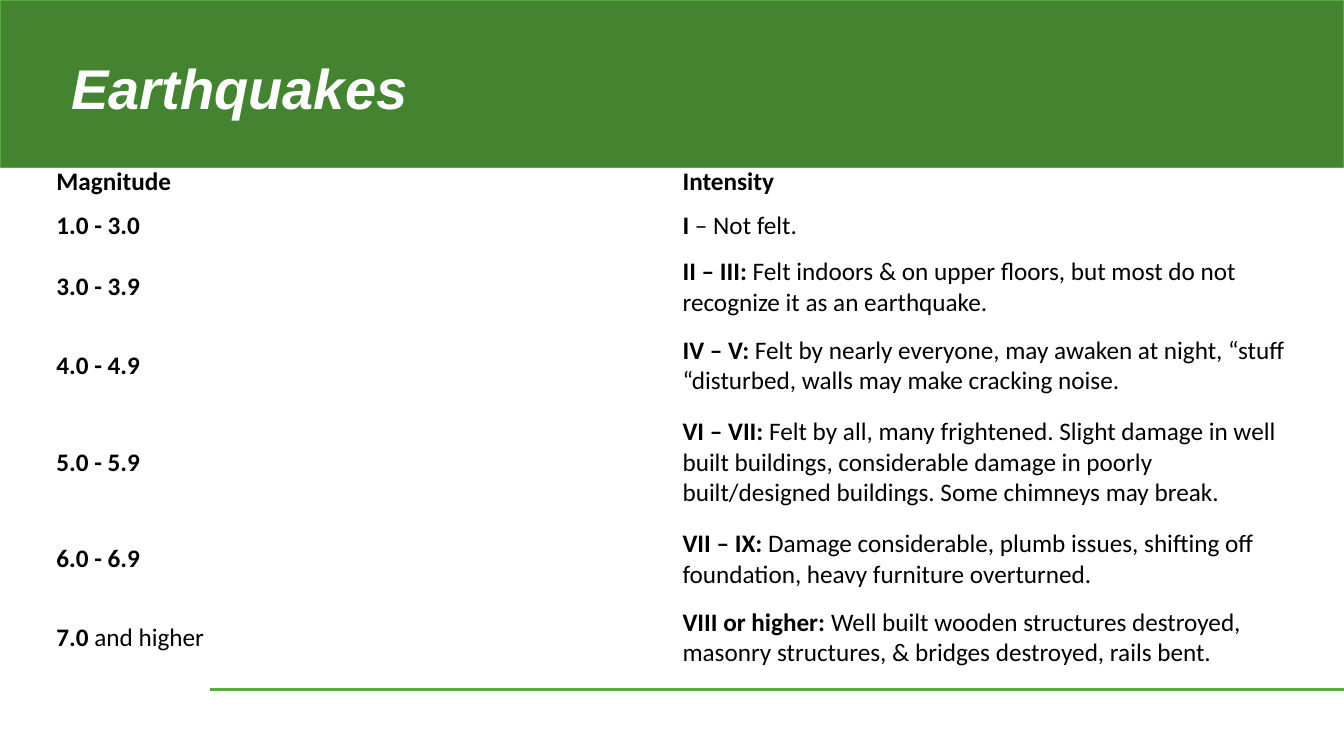
from lxml import etree
from pptx import Presentation
from pptx.dml.color import RGBColor
from pptx.enum.shapes import MSO_CONNECTOR, MSO_SHAPE
from pptx.enum.text import MSO_ANCHOR
from pptx.oxml.ns import qn
from pptx.util import Inches, Pt

RECTANGLE = MSO_SHAPE.RECTANGLE
STRAIGHT = MSO_CONNECTOR.STRAIGHT
MIDDLE = MSO_ANCHOR.MIDDLE
NO_STYLE_NO_GRID = "{2D5ABB26-0587-4C30-8999-92F81FD0307C}"

COLORS = {"band": "448431", "line": "57AC40", "title": "FFFFFF", "text": "000000"}

COLUMN_WIDTH = 6.21
ROW_HEIGHTS = [0.44, 0.44, 0.78, 0.78, 1.14, 0.78, 0.78]

# Each cell holds its bold part and its regular part.
ROWS = [
    (("Magnitude", ""), ("Intensity", "")),
    (("1.0 - 3.0", ""), ("I ", "– Not felt.")),
    (("3.0 - 3.9", ""),
     ("II – III:", " Felt indoors & on upper floors, but most do not "
      "recognize it as an earthquake.")),
    (("4.0 - 4.9", ""),
     ("IV – V: ", "Felt by nearly everyone, may awaken at night, “stuff "
      "“disturbed, walls may make cracking noise.")),
    (("5.0 - 5.9", ""),
     ("VI – VII: ", "Felt by all, many frightened. Slight damage in well built "
      "buildings, considerable damage in poorly built/designed buildings. "
      "Some chimneys may break.")),
    (("6.0 - 6.9", ""),
     ("VII – IX: ", "Damage considerable, plumb issues, shifting off "
      "foundation, heavy furniture overturned.")),
    (("7.0", " and higher"),
     ("VIII or higher: ", "Well built wooden structures destroyed, masonry "
      "structures, & bridges destroyed, rails bent.")),
]


def color(name):
    return RGBColor.from_string(COLORS[name])


def set_font(paragraph, name, size, color_name):
    paragraph.font.name = name
    paragraph.font.size = Pt(size)
    paragraph.font.color.rgb = color(color_name)


def add_band(slide):
    band = slide.shapes.add_shape(RECTANGLE, 0, 0, Inches(13.33), Inches(1.66))
    band.shadow.inherit = False
    band.fill.solid()
    band.fill.fore_color.rgb = color("band")
    band.line.color.rgb = color("line")
    band.line.width = Pt(1)


def add_footer_line(slide):
    line = slide.shapes.add_connector(
        STRAIGHT, Inches(2.08), Inches(6.84), Inches(13.33), Inches(6.84))
    line.line.color.rgb = color("line")
    line.line.width = Pt(2.04)
    etree.SubElement(line._element.spPr, qn("a:effectLst"))


def add_title(slide, text):
    box = slide.shapes.add_textbox(
        Inches(0.61), Inches(0.35), Inches(8.32), Inches(1.11))
    frame = box.text_frame
    frame.word_wrap = True
    frame.vertical_anchor = MIDDLE
    paragraph = frame.paragraphs[0]
    paragraph.text = text
    paragraph.line_spacing = 0.9
    set_font(paragraph, "Arial", 40, "title")
    paragraph.font.bold = True
    paragraph.font.italic = True


def fill_cell(cell, bold_text, regular_text):
    cell.fill.background()
    cell.vertical_anchor = MIDDLE
    paragraph = cell.text_frame.paragraphs[0]
    set_font(paragraph, "Calibri", 18, "text")
    for text, bold in ((bold_text, True), (regular_text, False)):
        if text:
            run = paragraph.add_run()
            run.text = text
            run.font.bold = bold


def add_magnitude_table(slide):
    frame = slide.shapes.add_table(
        len(ROWS), 2, Inches(0.46), Inches(1.58),
        Inches(2 * COLUMN_WIDTH), Inches(sum(ROW_HEIGHTS)))
    table = frame.table
    table.first_row = False
    table.horz_banding = False
    table._tbl.tblPr.find(qn("a:tableStyleId")).text = NO_STYLE_NO_GRID
    for column in table.columns:
        column.width = Inches(COLUMN_WIDTH)
    for row, height, contents in zip(table.rows, ROW_HEIGHTS, ROWS):
        row.height = Inches(height)
        for cell, content in zip(row.cells, contents):
            fill_cell(cell, *content)


def main():
    presentation = Presentation()
    presentation.slide_width = Inches(13.33)
    presentation.slide_height = Inches(7.5)
    slide = presentation.slides.add_slide(presentation.slide_layouts[6])
    add_band(slide)
    add_footer_line(slide)
    add_title(slide, "Earthquakes")
    add_magnitude_table(slide)
    presentation.save("out.pptx")


if __name__ == "__main__":
    main()
